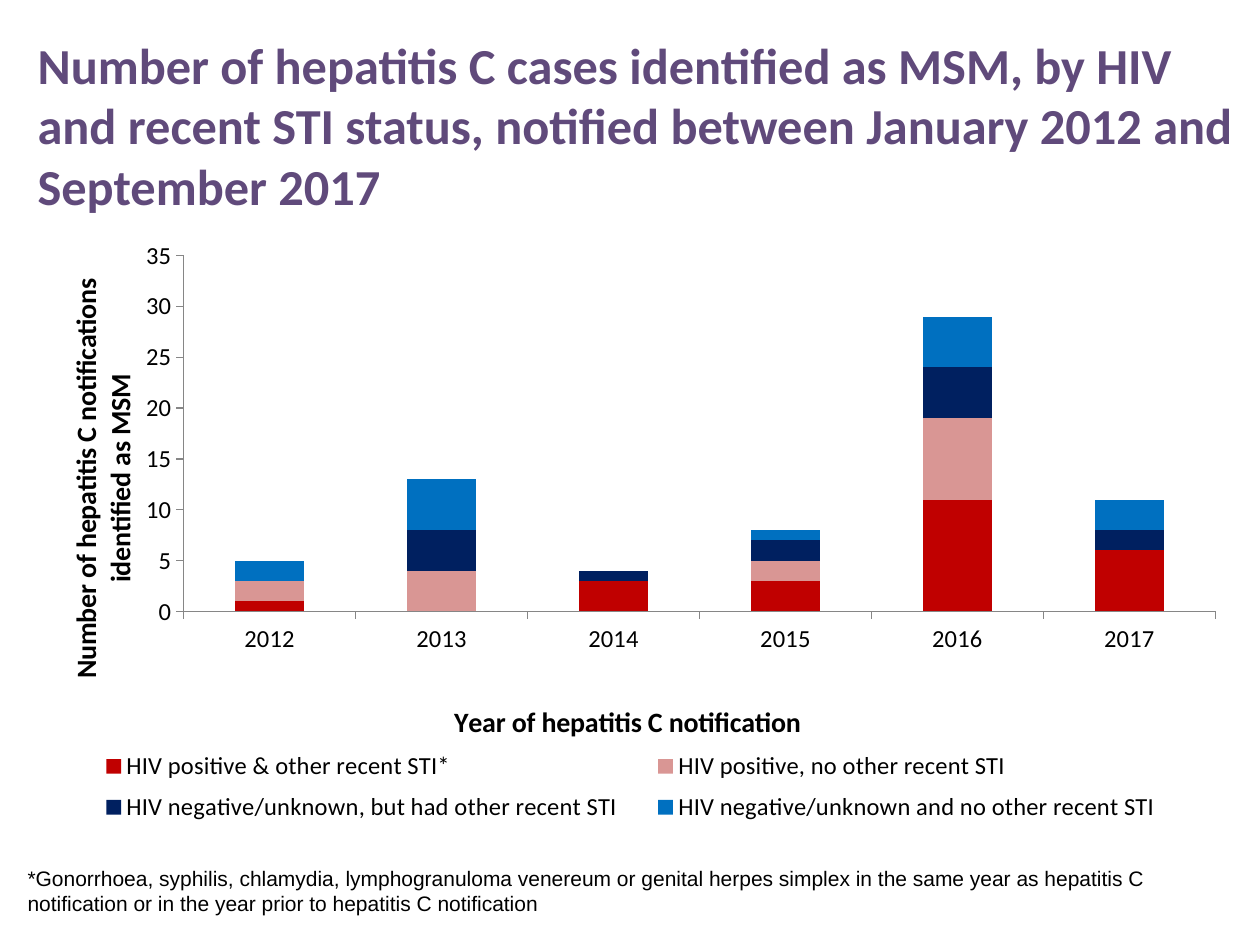
from dataclasses import dataclass
from typing import Any, NamedTuple, Optional

from lxml import etree
from pptx import Presentation
from pptx import util as u
from pptx.chart import data as cd
from pptx.dml.color import RGBColor
from pptx.enum import chart as ec
from pptx.enum import text as et
from pptx.oxml.ns import qn


@dataclass(frozen=True)
class Theme:
    purple: str = "604A7B"
    black: str = "000000"
    grey: str = "868686"
    sans: str = "Calibri"
    plain: str = "Arial"
    head: float = 28.8
    title: float = 16
    label: float = 14
    note: float = 12


class Box(NamedTuple):
    x: float
    y: float
    w: Optional[float] = None
    h: Optional[float] = None


class Note(NamedTuple):
    words: str
    box: Box
    face: dict
    hue: str
    anchor: Any


class Group(NamedTuple):
    name: str
    vals: tuple
    hue: str


T = Theme()
YEARS = [str(year) for year in range(2012, 2018)]
GROUPS = [
    Group("HIV positive & other recent STI*", (1, None, 3, 3, 11, 6), "C00000"),
    Group("HIV positive, no other recent STI", (2, 4, None, 2, 8, 0), "D99694"),
    Group("HIV negative/unknown, but had other recent STI",
          (None, 4, 1, 2, 5, 2), "002060"),
    Group("HIV negative/unknown and no other recent STI",
          (2, 5, None, 1, 5, 3), "0070C0"),
]
NOTES = [
    Note("Number of hepatitis C cases identified as MSM, by HIV and recent "
         "STI status, notified between January 2012 and September 2017",
         Box(0.2, 0.36, 9.69, 1.26),
         {"name": T.sans, "size": u.Pt(T.head), "bold": True},
         T.purple, et.MSO_ANCHOR.MIDDLE),
    Note("*Gonorrhoea, syphilis, chlamydia, lymphogranuloma venereum or "
         "genital herpes simplex in the same year as hepatitis C notification "
         "or in the year prior to hepatitis C notification",
         Box(0.12, 6.82, 9.69, 0.5),
         {"name": T.plain, "size": u.Pt(T.note), "bold": False},
         T.black, et.MSO_ANCHOR.TOP),
]


def assign(item: Any, vals: dict) -> None:
    for key, val in vals.items():
        setattr(item, key, val)


def style(font: Any, face: dict, hue: str) -> None:
    assign(font, face)
    font.color.rgb = RGBColor.from_string(hue)


def sans(size: float, bold: bool = False) -> dict:
    return {"name": T.sans, "size": u.Pt(size), "bold": bold}


def place(node: Any, box: Box, after: Optional[str] = None,
          inner: bool = False) -> None:
    """Fix a chart part at fractions of the chart area."""
    for old in node.findall(qn("c:layout")):
        node.remove(old)
    layout = etree.Element(qn("c:layout"))
    manual = etree.SubElement(layout, qn("c:manualLayout"))
    rules = {"layoutTarget": "inner"} if inner else {}
    rules.update(xMode="edge", yMode="edge")
    rules.update({key: val for key, val in box._asdict().items()
                  if val is not None})
    for key, val in rules.items():
        etree.SubElement(manual, qn(f"c:{key}")).set("val", str(val))
    if after:
        node.find(qn(after)).addnext(layout)
    else:
        node.insert(0, layout)


def write(slide: Any, note: Note) -> None:
    shape = slide.shapes.add_textbox(*map(u.Inches, note.box))
    frame = shape.text_frame
    assign(frame, {"word_wrap": True, "vertical_anchor": note.anchor})
    run = frame.paragraphs[0].add_run()
    run.text = note.words
    style(run.font, note.face, note.hue)


def label(axis: Any, words: str, box: Box) -> None:
    assign(axis, {"has_major_gridlines": False,
                  "major_tick_mark": ec.XL_TICK_MARK.OUTSIDE,
                  "minor_tick_mark": ec.XL_TICK_MARK.NONE})
    axis.format.line.color.rgb = RGBColor.from_string(T.grey)
    style(axis.tick_labels.font, sans(T.label), T.black)
    frame = axis.axis_title.text_frame
    frame.text = words
    style(frame.paragraphs[0].runs[0].font, sans(T.title, True), T.black)
    place(axis.axis_title._element, box, "c:tx")


def plot(slide: Any, box: Box) -> None:
    data = cd.CategoryChartData()
    data.categories = YEARS
    for group in GROUPS:
        data.add_series(group.name, group.vals)
    kind = ec.XL_CHART_TYPE.COLUMN_STACKED
    chart = slide.shapes.add_chart(kind, *map(u.Inches, box), data).chart
    assign(chart, {"has_title": False, "has_legend": True})
    style(chart.font, sans(10), T.black)

    bars = chart.plots[0]
    assign(bars, {"gap_width": 150, "overlap": 100,
                  "vary_by_categories": False})
    for series, group in zip(bars.series, GROUPS):
        series.format.fill.solid()
        series.format.fill.fore_color.rgb = RGBColor.from_string(group.hue)

    label(chart.category_axis, "Year of hepatitis C notification",
          Box(0.35, 0.77))
    label(chart.value_axis,
          "Number of hepatitis C notifications identified as MSM",
          Box(0.03, 0.08))
    assign(chart.value_axis, {"minimum_scale": 0, "maximum_scale": 35,
                              "major_unit": 5})

    legend = chart.legend
    assign(legend, {"position": ec.XL_LEGEND_POSITION.BOTTOM,
                    "include_in_layout": False})
    style(legend.font, sans(T.label), T.black)
    place(legend._element, Box(0.04, 0.84, 0.92, 0.15), "c:legendPos")
    area = chart._chartSpace.chart.plotArea
    place(area, Box(0.131, 0.051, 0.852, 0.579), inner=True)


def main() -> None:
    deck = Presentation()
    assign(deck, {"slide_width": u.Inches(10), "slide_height": u.Inches(7.5)})
    slide = deck.slides.add_slide(deck.slide_layouts[6])
    plot(slide, Box(0.2, 1.78, 9.61, 4.88))
    for note in NOTES:
        write(slide, note)
    deck.save("out.pptx")


if __name__ == "__main__":
    main()
